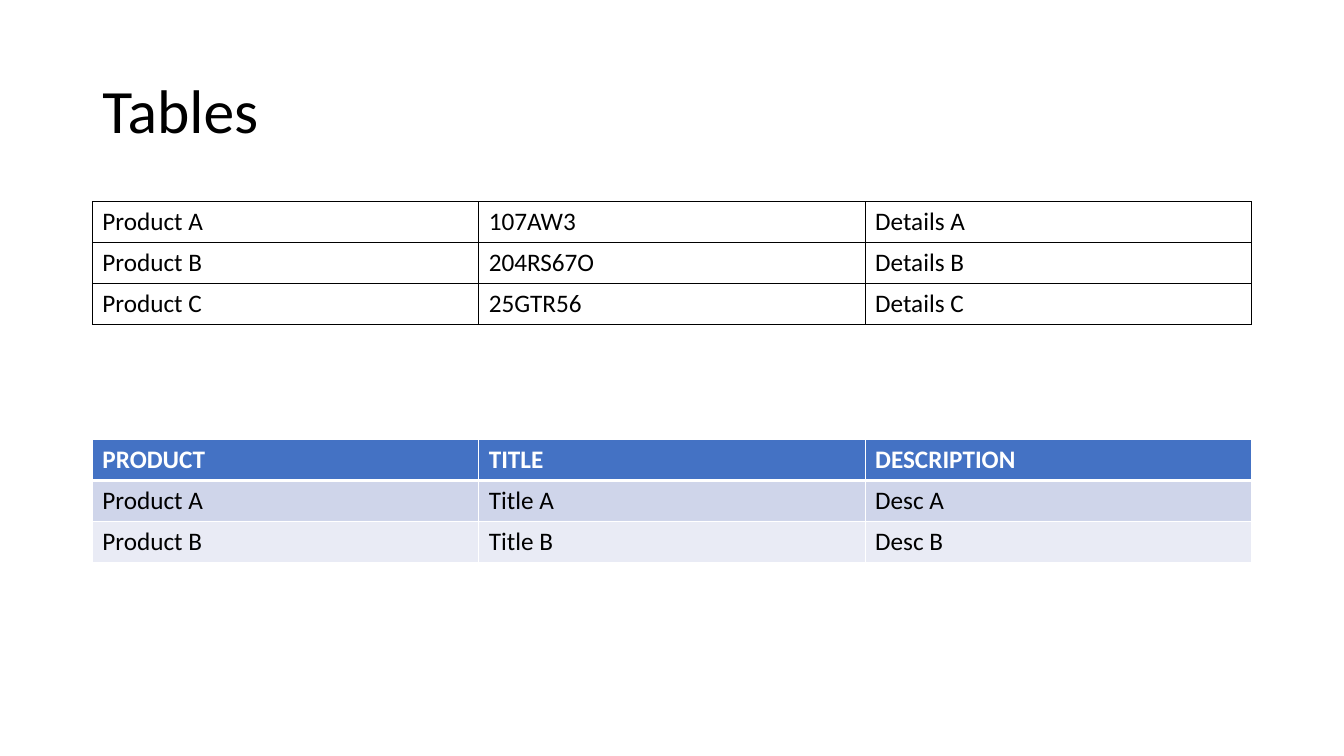
from lxml.etree import SubElement
from pptx import Presentation
from pptx.dml.color import RGBColor
from pptx.enum.text import MSO_ANCHOR, PP_ALIGN
from pptx.oxml.ns import qn
from pptx.util import Pt

FONT = "Calibri"
LEFT, WIDTH, ROW_HEIGHT = 66, 828, 29.2
BLACK, WHITE, BLUE = "000000", "FFFFFF", "4472C4"
BANDS = ["CFD5EA", "E9EBF5"]

PLAIN_ROWS = [
    ["Product A", "107AW3", "Details A"],
    ["Product B", "204RS67O", "Details B"],
    ["Product C", "25GTR56", "Details C"],
]
BANDED_ROWS = [
    ["PRODUCT", "TITLE", "DESCRIPTION"],
    ["Product A", "Title A", "Desc A"],
    ["Product B", "Title B", "Desc B"],
]


def rgb(color):
    return RGBColor.from_string(color)


def format_text(p, size, color, bold=False):
    p.font.name = FONT
    p.font.size = Pt(size)
    p.font.bold = bold
    p.font.color.rgb = rgb(color)


def add_title(slide, text):
    sp = slide.shapes.title
    sp.left, sp.top, sp.width, sp.height = Pt(LEFT), Pt(28.75), Pt(WIDTH), Pt(104.4)
    tf = sp.text_frame
    tf.text = text
    tf.vertical_anchor = MSO_ANCHOR.MIDDLE
    p = tf.paragraphs[0]
    p.alignment = PP_ALIGN.LEFT
    p.line_spacing = 0.9
    format_text(p, 44, BLACK)


def set_borders(cell, color, widths):
    tc_pr = cell._tc.get_or_add_tcPr()
    for i, (side, width) in enumerate(widths.items()):
        ln = tc_pr.makeelement(qn(f"a:ln{side}"), {"w": str(Pt(width))})
        fill = SubElement(ln, qn("a:solidFill"))
        SubElement(fill, qn("a:srgbClr"), val=color)
        tc_pr.insert(i, ln)


def add_grid(slide, top, rows, border, fills=None):
    n_rows, n_cols = len(rows), len(rows[0])
    frame = slide.shapes.add_table(
        n_rows, n_cols, Pt(LEFT), Pt(top), Pt(WIDTH), Pt(ROW_HEIGHT * n_rows)
    )
    table = frame.table
    table.first_row = bool(fills)
    table.horz_banding = bool(fills)
    for i, texts in enumerate(rows):
        header = bool(fills) and i == 0
        for j, text in enumerate(texts):
            cell = table.cell(i, j)
            cell.text = text
            format_text(
                cell.text_frame.paragraphs[0], 18, WHITE if header else BLACK, header
            )
            if fills:
                cell.fill.solid()
                cell.fill.fore_color.rgb = rgb(fills[i])
            else:
                cell.fill.background()
            above = 3 if fills and i == 1 else 1
            below = 3 if header else 1
            set_borders(cell, border, {"L": 1, "R": 1, "T": above, "B": below})


def main():
    prs = Presentation()
    prs.slide_width, prs.slide_height = Pt(960), Pt(540)
    slide = prs.slides.add_slide(prs.slide_layouts[5])
    add_title(slide, "Tables")
    add_grid(slide, 144, PLAIN_ROWS, BLACK)
    add_grid(slide, 314, BANDED_ROWS, WHITE, [BLUE] + BANDS)
    prs.save("out.pptx")


if __name__ == "__main__":
    main()
